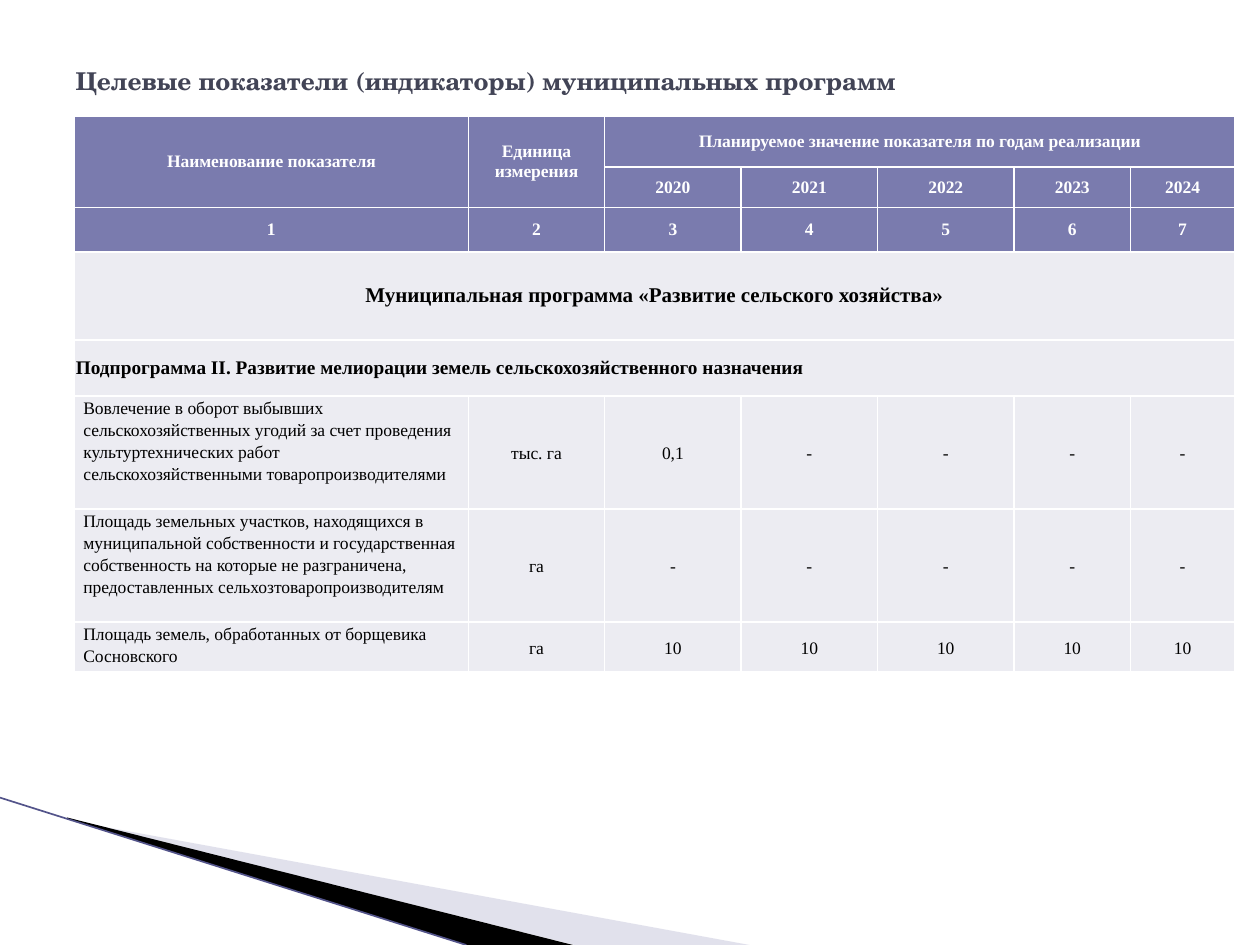
from lxml.etree import SubElement
from pptx import Presentation
from pptx.dml.color import RGBColor
from pptx.enum.shapes import MSO_CONNECTOR
from pptx.enum.text import MSO_ANCHOR, PP_ALIGN
from pptx.oxml import parse_xml
from pptx.oxml.ns import nsdecls, qn
from pptx.util import Cm, Pt

COLORS = {
    "title": "424456", "header": "7A7BAE", "body": "ECECF2", "white": "FFFFFF",
    "black": "000000", "wedge": "B6B6D1", "edge": "53548A",
}
COLS = [7.94] + [2.75] * 4 + [2.35, 2.1]
ROWS = [1.03, 0.81, 0.9, 1.77, 1.13, 2.28, 2.28, 1]
HEADER = [
    ["Наименование показателя", "Единица измерения",
     "Планируемое значение показателя по годам реализации"],
    ["", "", "2020", "2021", "2022", "2023", "2024"],
    ["1", "2", "3", "4", "5", "6", "7"],
]
SECTIONS = [
    ("Муниципальная программа «Развитие сельского хозяйства»", 12, PP_ALIGN.CENTER),
    ("Подпрограмма II. Развитие мелиорации земель сельскохозяйственного назначения",
     11, PP_ALIGN.LEFT),
]
INDICATORS = [
    ["Вовлечение в оборот выбывших сельскохозяйственных угодий за счет проведения "
     "культуртехнических работ сельскохозяйственными товаропроизводителями",
     "тыс. га", "0,1", "-", "-", "-", "-"],
    ["Площадь земельных участков, находящихся в муниципальной собственности и "
     "государственная собственность на которые не разграничена, предоставленных "
     "сельхозтоваропроизводителям", "га"] + ["-"] * 5,
    ["Площадь земель, обработанных от борщевика Сосновского", "га"] + ["10"] * 5,
]
MERGES = [(0, 0, 1, 0), (0, 1, 1, 1), (0, 2, 0, 6), (3, 0, 3, 6), (4, 0, 4, 6)]


def rgb(name):
    """Return the named palette colour."""
    return RGBColor.from_string(COLORS[name])


def write(tf, text, size=10, color="black", bold=False, font="Times New Roman",
          align=PP_ALIGN.CENTER, spacing=1.0):
    """Put one formatted paragraph into a text frame."""
    p = tf.paragraphs[0]
    p.alignment, p.line_spacing = align, spacing
    r = p.add_run()
    r.text = text
    r.font.size, r.font.bold, r.font.name = Pt(size), bold, font
    r.font.color.rgb = rgb(color)


class Deck:
    """Hold the presentation style and the current slide."""

    def __init__(self):
        """Create a 4:3 presentation with one title slide."""
        self.prs = Presentation()
        self.prs.slide_width, self.prs.slide_height = Cm(25.4), Cm(19.05)
        self.s = self.prs.slides.add_slide(self.prs.slide_layouts[5])

    def title(self, text, x, y, w, h):
        """Place and fill the title placeholder."""
        sp = self.s.shapes.title
        sp.left, sp.top, sp.width, sp.height = Cm(x), Cm(y), Cm(w), Cm(h)
        sp.text_frame.vertical_anchor = MSO_ANCHOR.MIDDLE
        write(sp.text_frame, text, size=14, color="title", bold=True,
              font="TeX Gyre Schola", align=PP_ALIGN.LEFT)

    def wedge(self, points, color, alpha=None):
        """Draw a filled polygon without outline."""
        pts = [(Cm(x), Cm(y)) for x, y in points]
        fb = self.s.shapes.build_freeform(*pts[0], scale=1.0)
        fb.add_line_segments(pts[1:], close=True)
        sp = fb.convert_to_shape()
        sp.shadow.inherit = False
        sp.fill.solid()
        sp.fill.fore_color.rgb = rgb(color)
        sp.line.fill.background()
        if alpha:
            clr = sp.fill._xPr.find(qn("a:solidFill"))[0]
            SubElement(clr, qn("a:alpha")).set("val", str(alpha * 1000))

    def line(self, x1, y1, x2, y2, color, width):
        """Draw a straight line."""
        cn = self.s.shapes.add_connector(
            MSO_CONNECTOR.STRAIGHT, Cm(x1), Cm(y1), Cm(x2), Cm(y2))
        cn.line.color.rgb, cn.line.width = rgb(color), Pt(width)
        SubElement(cn._element.spPr, qn("a:effectLst"))

    def table(self, x, y, cols, rows, merges):
        """Add an empty table with merged cells."""
        tbl = self.s.shapes.add_table(
            len(rows), len(cols), Cm(x), Cm(y), Cm(sum(cols)), Cm(sum(rows))).table
        for col, w in zip(tbl.columns, cols):
            col.width = Cm(w)
        for row, h in zip(tbl.rows, rows):
            row.height = Cm(h)
        for r1, c1, r2, c2 in merges:
            tbl.cell(r1, c1).merge(tbl.cell(r2, c2))
        return tbl

    def cell(self, cell, text, fill, pad=0.03, anchor=MSO_ANCHOR.MIDDLE, **fmt):
        """Fill, border and write a table cell."""
        cell.margin_left = cell.margin_right = Cm(pad)
        cell.margin_top = cell.margin_bottom = 0
        cell.vertical_anchor = anchor
        cell.fill.solid()
        cell.fill.fore_color.rgb = rgb(fill)
        tc_pr = cell._tc.get_or_add_tcPr()
        for i, side in enumerate("LRTB"):
            tc_pr.insert(i, parse_xml(
                f'<a:ln{side} {nsdecls("a")} w="12700"><a:solidFill>'
                f'<a:srgbClr val="{COLORS["white"]}"/></a:solidFill></a:ln{side}>'))
        if text:
            write(cell.text_frame, text, **fmt)


def main():
    """Build the slide and save it."""
    deck = Deck()
    deck.wedge([(1.4, 16.54), (15.11, 19.05), (11.58, 19.05), (1.4, 16.51)], "wedge", 40)
    deck.wedge([(1.35, 16.48), (11.55, 19.05), (9.4, 19.05), (1.37, 16.51)], "black")
    deck.line(0, 16.08, 9.4, 19.05, "edge", 0.95)
    deck.title("Целевые показатели (индикаторы) муниципальных программ",
               1.27, 0.76, 22.86, 1.75)
    tbl = deck.table(1.5, 2.34, COLS, ROWS, MERGES)
    n = len(COLS)
    for i, texts in enumerate(HEADER):
        for j, text in enumerate(texts + [""] * (n - len(texts))):
            deck.cell(tbl.cell(i, j), text, "header", color="white", bold=True)
    for i, (text, size, align) in enumerate(SECTIONS, len(HEADER)):
        for j in range(n):
            deck.cell(tbl.cell(i, j), "" if j else text, "body",
                      size=size, bold=True, align=align)
    for i, texts in enumerate(INDICATORS, len(HEADER) + len(SECTIONS)):
        for j, text in enumerate(texts):
            deck.cell(tbl.cell(i, j), text, "body", pad=0.18, spacing=1.15,
                      anchor=MSO_ANCHOR.MIDDLE if j else MSO_ANCHOR.TOP,
                      align=PP_ALIGN.CENTER if j else PP_ALIGN.LEFT)
    deck.prs.save("out.pptx")


if __name__ == "__main__":
    main()
